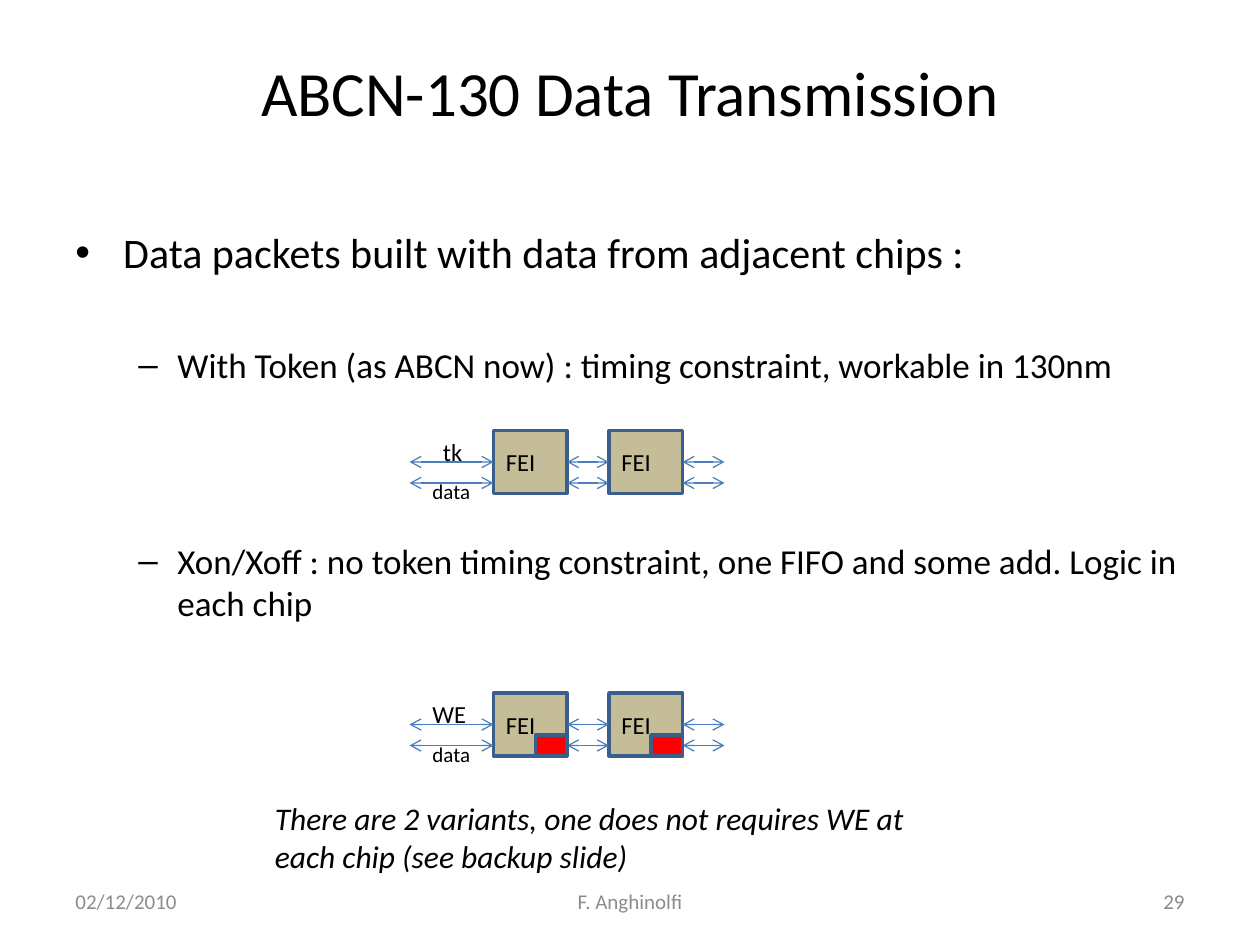
from dataclasses import dataclass

from lxml import etree
from pptx import Presentation
from pptx.dml.color import RGBColor
from pptx.enum import shapes, text
from pptx.oxml import ns
from pptx.util import Inches, Pt

COLUMNS, ROWS = 120, 90
CHIP_COLUMNS = (47, 58)
CHIP_WIDTH, CHIP_HEIGHT = 7, 6
BUS_START, BUS_END = 39, 69
TOKEN_ROW, DATA_ROW = 3, 5

deck = Presentation()
deck.slide_width, deck.slide_height = Inches(10), Inches(7.5)
slide = deck.slides.add_slide(deck.slide_layouts[6])


@dataclass
class Label:
    words: str
    column: float
    row: float
    width: float
    height: float
    size: int = 14
    color: str = "000000"
    align: text.PP_ALIGN = text.PP_ALIGN.LEFT
    anchor: text.MSO_ANCHOR = text.MSO_ANCHOR.TOP
    wrap: bool = True
    italic: bool = False


@dataclass
class Point:
    words: str
    level: int
    size: int
    bullet: str
    margin: float
    hang: float
    gap: float


@dataclass
class ChipChain:
    row: int
    signal: Label
    has_fifo: bool


def x(column: float) -> int:
    return round(deck.slide_width * column / COLUMNS)


def y(row: float) -> int:
    return round(deck.slide_height * row / ROWS)


def rgb(value: str) -> RGBColor:
    return RGBColor.from_string(value)


def style(paragraph, size: int, color: str, italic: bool = False) -> None:
    font = paragraph.font
    font.name, font.size, font.italic = "Calibri", Pt(size), italic
    font.color.rgb = rgb(color)


def add_frame(column: float, row: float, width: float, height: float):
    frame = slide.shapes.add_textbox(x(column), y(row), x(width), y(height)).text_frame
    frame.word_wrap = True
    return frame


def add_label(label: Label) -> None:
    frame = add_frame(label.column, label.row, label.width, label.height)
    frame.word_wrap = label.wrap
    if not label.wrap:
        frame.auto_size = text.MSO_AUTO_SIZE.SHAPE_TO_FIT_TEXT
    frame.vertical_anchor = label.anchor
    paragraph = frame.paragraphs[0]
    paragraph.text, paragraph.alignment = label.words, label.align
    style(paragraph, label.size, label.color, label.italic)


def add_points(points: list[Point]) -> None:
    frame = add_frame(6, 21, 108, 59.4)
    for index, point in enumerate(points):
        paragraph = frame.add_paragraph() if index else frame.paragraphs[0]
        paragraph.text, paragraph.level = point.words, point.level
        paragraph.space_before = Pt(point.gap)
        style(paragraph, point.size, "000000")
        properties = paragraph._p.get_or_add_pPr()
        properties.set("marL", str(Inches(point.margin)))
        properties.set("indent", str(-Inches(point.hang)))
        defaults = properties.find(ns.qn("a:defRPr"))
        defaults.addprevious(etree.Element(ns.qn("a:buFont"), typeface="Arial"))
        defaults.addprevious(etree.Element(ns.qn("a:buChar"), char=point.bullet))


def add_block(column: float, row: float, width: float, height: float, fill: str):
    block = slide.shapes.add_shape(
        shapes.MSO_SHAPE.RECTANGLE, x(column), y(row), x(width), y(height))
    block.shadow.inherit = False
    block.fill.solid()
    block.fill.fore_color.rgb = rgb(fill)
    block.line.color.rgb = rgb("3A5F8C")
    block.line.width = Pt(2)
    return block


def add_arrow(start: float, end: float, row: float):
    arrow = slide.shapes.add_connector(
        shapes.MSO_CONNECTOR.STRAIGHT, x(start), y(row), x(end), y(row))
    arrow.line.color.rgb = rgb("4B7EBC")
    arrow.line.width = Pt(0.75)
    outline = arrow.line._get_or_add_ln()
    for end_name in ("a:headEnd", "a:tailEnd"):
        etree.SubElement(outline, ns.qn(end_name), type="arrow")
    etree.SubElement(arrow._element.spPr, ns.qn("a:effectLst"))
    return arrow


def add_chain(chain: ChipChain) -> None:
    chips = [add_block(column, chain.row, CHIP_WIDTH, CHIP_HEIGHT, "C4BD97")
             for column in CHIP_COLUMNS]
    starts = (*CHIP_COLUMNS, BUS_END)
    ends = (BUS_START, *(column + CHIP_WIDTH for column in CHIP_COLUMNS))
    right_chips, left_chips = (*chips, None), (None, *chips)
    for start, end, right, left in zip(starts, ends, right_chips, left_chips):
        token = add_arrow(start, end, chain.row + TOKEN_ROW)
        if right:
            token.begin_connect(right, 1)
        if left:
            token.end_connect(left, 3)
        add_arrow(start, end, chain.row + DATA_ROW)
    for column in CHIP_COLUMNS:
        add_label(Label("FEI", column, chain.row + 1, 6.1, 4.1, wrap=False))
        if chain.has_fifo:
            add_block(column + 4, chain.row + 4, 3, 2, "FF0000")
    add_label(chain.signal)
    add_label(Label("data", 40, chain.row + 4, 8, 3.6, size=12))


middle = text.MSO_ANCHOR.MIDDLE
center, right_side = text.PP_ALIGN.CENTER, text.PP_ALIGN.RIGHT

add_points([
    Point("Data packets built with data from adjacent chips :", 0, 24, "•", 0.38, 0.38, 0),
    Point("With Token (as ABCN now) : timing constraint, workable in 130nm",
          1, 20, "–", 0.81, 0.31, 38),
    Point("Xon/Xoff : no token timing constraint, one FIFO and some add. Logic in each chip",
          1, 20, "–", 0.81, 0.31, 88),
])
add_label(Label("ABCN-130 Data Transmission", 6, 3.6, 108, 10.2, 36,
                align=center, anchor=middle))

for chain in (
    ChipChain(41, Label("tk", 41, 41, 4.4, 4.1, wrap=False), False),
    ChipChain(66, Label("WE", 40, 66, 6.2, 4.1, wrap=False), True),
):
    add_chain(chain)

for label in (
    Label("There are 2 variants, one does not requires WE at each chip (see backup slide)",
          25, 75.5, 66, 8.5, 18, italic=True),
    Label("02/12/2010", 6, 83.4, 28, 4.8, 12, "8C8C8C", anchor=middle),
    Label("29", 86, 83.4, 28, 4.8, 12, "898989", right_side, middle),
    Label("F. Anghinolfi", 41, 83.4, 38, 4.8, 12, "8C8C8C", center, middle),
):
    add_label(label)

deck.save("out.pptx")
